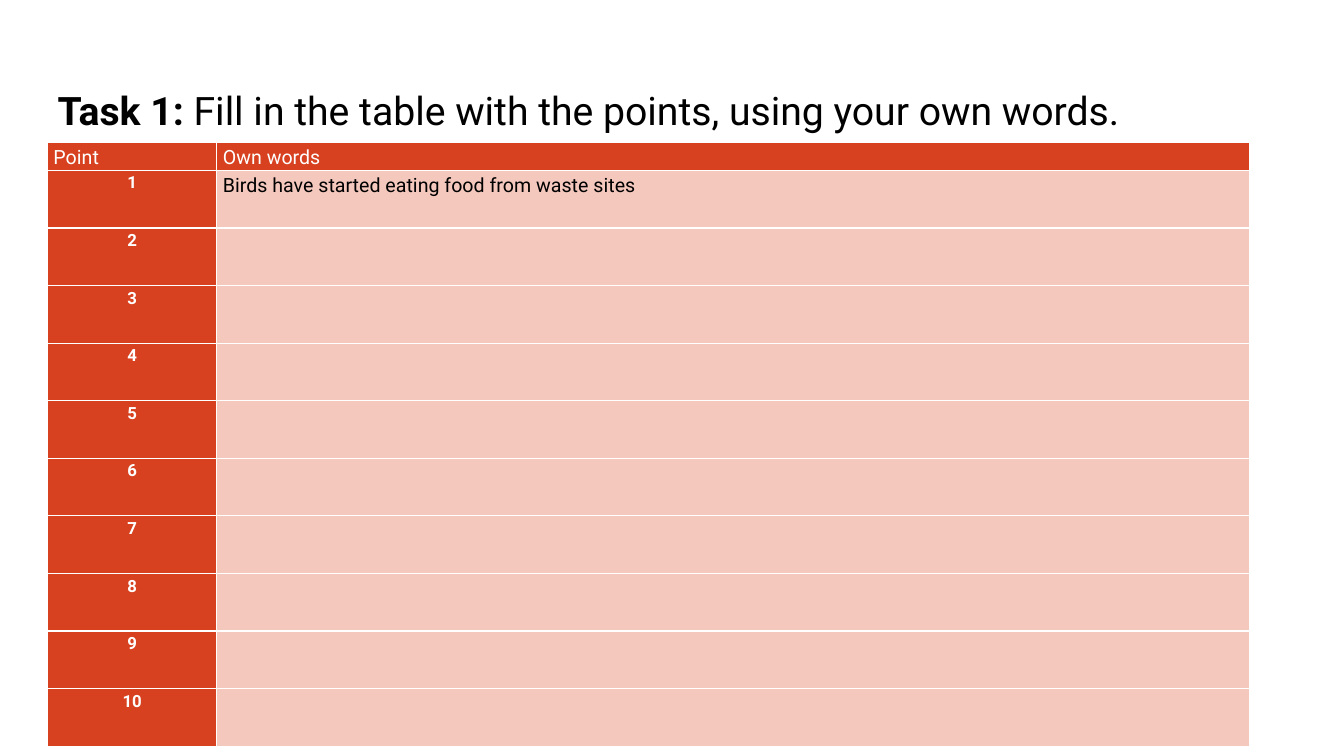
from lxml import etree
from pptx import Presentation
from pptx import util as u
from pptx.dml.color import RGBColor
from pptx.enum import text
from pptx.oxml import ns

FONT = "Roboto"
RED, PINK, WHITE, BLACK = "D74120", "F5C8BD", "FFFFFF", "000000"
LEFT = 33.9
POINTS = 10
OWN_WORDS = {1: "Birds have started eating food from waste sites"}


def colour(value):
    return RGBColor.from_string(value)


def format_paragraph(para, size, ink, align=text.PP_ALIGN.LEFT, bold=False):
    para.alignment = align
    para.line_spacing = 1.15
    para.space_before = u.Pt(0)
    para.space_after = u.Pt(8)
    para.font.name = FONT
    para.font.size = u.Pt(size)
    para.font.bold = bold
    para.font.color.rgb = colour(ink)


def add_title(page, label, task):
    box = page.shapes.title
    box.left, box.top = u.Pt(LEFT), u.Pt(53.3)
    box.width, box.height = u.Pt(882), u.Pt(44.6)
    frame = box.text_frame
    frame.word_wrap = True
    frame.auto_size = text.MSO_AUTO_SIZE.NONE
    frame.vertical_anchor = text.MSO_ANCHOR.TOP
    para = frame.paragraphs[0]
    format_paragraph(para, 28, BLACK)
    span = para.add_run()
    span.text = label
    span.font.bold = True
    para.add_run().text = task


def add_borders(cell):
    properties = cell._tc.get_or_add_tcPr()
    for side in ("lnL", "lnR", "lnT", "lnB"):
        line = etree.SubElement(properties, ns.qn(f"a:{side}"), w=str(u.Pt(1)))
        fill = etree.SubElement(line, ns.qn("a:solidFill"))
        etree.SubElement(fill, ns.qn("a:srgbClr"), val=WHITE)


def fill_cell(cell, words, fill, size, ink, **style):
    add_borders(cell)
    cell.fill.solid()
    cell.fill.fore_color.rgb = colour(fill)
    cell.margin_left = cell.margin_right = u.Pt(4.3)
    cell.margin_top = cell.margin_bottom = u.Pt(0)
    cell.text = words
    format_paragraph(cell.text_frame.paragraphs[0], size, ink, **style)


def add_points_table(page):
    header_height, row_height = 19.9, 41.14
    frame = page.shapes.add_table(
        POINTS + 1, 2, u.Pt(LEFT), u.Pt(101.8), u.Pt(859),
        u.Pt(header_height + POINTS * row_height))
    table = frame.table
    for column, width in zip(table.columns, (121, 738)):
        column.width = u.Pt(width)
    for index, row in enumerate(table.rows):
        row.height = u.Pt(row_height if index else header_height)

    # Header row
    for index, heading in enumerate(("Point", "Own words")):
        fill_cell(table.cell(0, index), heading, RED, 14, WHITE)

    # Numbered rows
    for number in range(1, POINTS + 1):
        fill_cell(table.cell(number, 0), str(number), RED, 12, WHITE,
                  align=text.PP_ALIGN.CENTER, bold=True)
        fill_cell(table.cell(number, 1), OWN_WORDS.get(number, ""),
                  PINK, 14, BLACK)


def main():
    deck = Presentation()
    deck.slide_width, deck.slide_height = u.Pt(960), u.Pt(540)
    page = deck.slides.add_slide(deck.slide_layouts.get_by_name("Title Only"))
    add_title(page, "Task 1: ",
              "Fill in the table with the points, using your own words.")
    add_points_table(page)
    deck.save("out.pptx")


if __name__ == "__main__":
    main()
